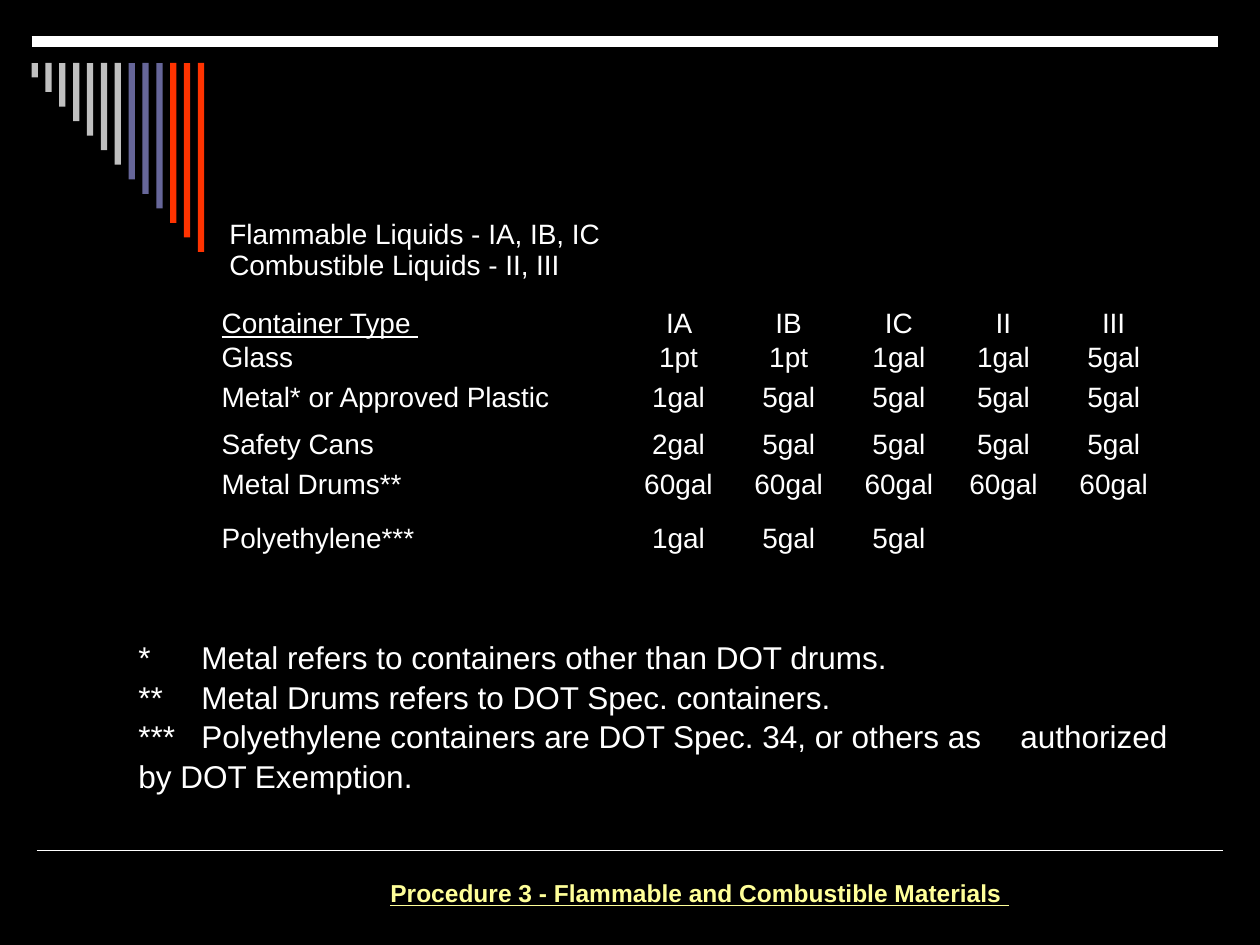
from lxml.etree import SubElement
from pptx import Presentation
from pptx.dml.color import RGBColor
from pptx.enum.shapes import MSO_CONNECTOR, MSO_SHAPE
from pptx.enum.text import PP_ALIGN
from pptx.oxml.ns import qn
from pptx.util import Inches, Pt


def color(hex_code):
    return RGBColor.from_string(hex_code)


def style_text(text_frame, size, hex_code="FFFFFF", bold=False, underline=False):
    for paragraph in text_frame.paragraphs:
        for run in paragraph.runs:
            run.font.name = "Arial"
            run.font.size = Pt(size)
            run.font.bold = bold
            run.font.underline = underline
            run.font.color.rgb = color(hex_code)


presentation = Presentation()
presentation.slide_width = Inches(10)
presentation.slide_height = Inches(7.5)
slide = presentation.slides.add_slide(presentation.slide_layouts[6])
slide.background.fill.solid()
slide.background.fill.fore_color.rgb = color("000000")

# Rules above and below the content
for left, top, weight in [(0.29, 6.75, 1), (0.25, 0.33, 6)]:
    rule = slide.shapes.add_connector(
        MSO_CONNECTOR.STRAIGHT,
        Inches(left), Inches(top), Inches(left + 9.42), Inches(top))
    rule.line.color.rgb = color("FFFFFF")
    rule.line.width = Pt(weight)
    SubElement(rule._element.spPr, qn("a:effectLst"))

# Corner stripes, each longer than the one before
stripe_colors = ["C0C0C0"] * 7 + ["666699"] * 3 + ["FF3300"] * 3
for i, stripe_color in enumerate(stripe_colors):
    stripe = slide.shapes.add_shape(
        MSO_SHAPE.RECTANGLE, Inches(0.25 + 0.11 * i), Inches(0.5),
        Inches(0.05), Inches(1.5 * (i + 1) / len(stripe_colors)))
    stripe.shadow.inherit = False
    stripe.fill.solid()
    stripe.fill.fore_color.rgb = color(stripe_color)
    stripe.line.fill.background()

# Container limits
limits = [
    ["Flammable Liquids - IA, IB, IC\vCombustible Liquids - II, III"],
    ["Container Type ", "IA ", "IB ", "IC ", "II ", "III "],
    ["Glass", "1pt ", "1pt ", "1gal ", "1gal ", "5gal "],
    ["Metal* or Approved Plastic", "1gal ", "5gal ", "5gal ", "5gal ", "5gal "],
    ["Safety Cans", "2gal ", "5gal ", "5gal ", "5gal ", "5gal "],
    ["Metal Drums**", "60gal ", "60gal ", "60gal ", "60gal ", "60gal "],
    ["Polyethylene***", "1gal ", "5gal ", "5gal "],
]
column_widths = [3.25, 0.83, 0.92, 0.83, 0.83, 0.92]
row_heights = [0.77, 0.23, 0.32, 0.37, 0.32, 0.43, 0.32]
limits_table = slide.shapes.add_table(
    len(row_heights), len(column_widths), Inches(1.75), Inches(1.67),
    Inches(sum(column_widths)), Inches(sum(row_heights))).table
limits_table.first_row = False
limits_table.horz_banding = False
# "No Style, No Grid"
limits_table._tbl.tblPr.find(qn("a:tableStyleId")).text = (
    "{2D5ABB26-0587-4C30-8999-92F81FD0307C}")
for column, width in zip(limits_table.columns, column_widths):
    column.width = Inches(width)
for row, height in zip(limits_table.rows, row_heights):
    row.height = Inches(height)
limits_table.cell(0, 0).merge(limits_table.cell(0, len(column_widths) - 1))

for r in range(len(row_heights)):
    for c in range(len(column_widths)):
        cell = limits_table.cell(r, c)
        cell.fill.background()
        inset = Inches(0.07 if r == 0 else 0.01)
        cell.margin_left = cell.margin_right = inset
        cell.margin_top = cell.margin_bottom = inset
        if c < len(limits[r]):
            cell.text_frame.text = limits[r][c]
            style_text(cell.text_frame, 16, underline=(r, c) == (1, 0))
            if c > 0:
                cell.text_frame.paragraphs[0].alignment = PP_ALIGN.CENTER

# Footnotes
footnotes = slide.shapes.add_textbox(
    Inches(1), Inches(5), Inches(8.42), Inches(1.31)).text_frame
footnotes.word_wrap = True
footnotes.text = "\n".join([
    "*\tMetal refers to containers other than DOT drums.",
    "**\tMetal Drums refers to DOT Spec. containers.",
    "***\tPolyethylene containers are DOT Spec. 34, or others as "
    "\tauthorized by DOT Exemption.",
])
style_text(footnotes, 18)
for footnote in footnotes.paragraphs:
    footnote.line_spacing = 1.05

# Procedure title
procedure = slide.shapes.add_textbox(
    Inches(3), Inches(6.92), Inches(5.13), Inches(0.34)).text_frame
procedure.word_wrap = False
procedure.text = "Procedure 3 - Flammable and Combustible Materials "
style_text(procedure, 14, "FFFF99", bold=True, underline=True)

presentation.save("out.pptx")
